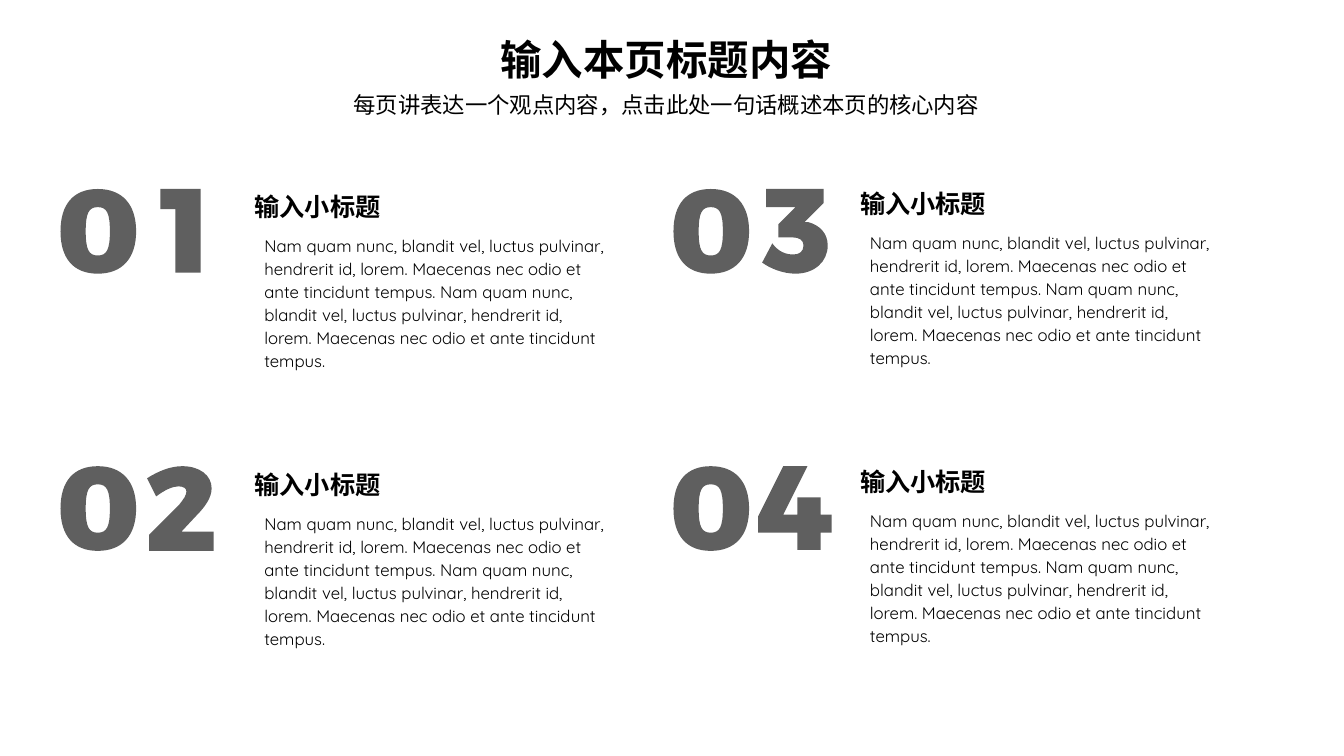
from dataclasses import dataclass
from typing import Optional, Union

import pptx
import pptx.dml.color
import pptx.enum.text
import pptx.oxml
import pptx.oxml.ns
import pptx.slide
import pptx.util

WIDTH = pptx.util.Inches(13.33)
HEIGHT = pptx.util.Inches(7.5)
BLACK = pptx.dml.color.RGBColor(0x00, 0x00, 0x00)
GREY = pptx.dml.color.RGBColor(0x5F, 0x5F, 0x5F)
FONT = "Quicksand"

HEADING = "输入小标题"
SENTENCES = (
    "Nam quam nunc, blandit vel, luctus pulvinar, hendrerit id, lorem. "
    "Maecenas nec odio et ante tincidunt tempus."
)
BODY = f"{SENTENCES} {SENTENCES}"

# Digit outlines in units of 1/750 of the slide height. A pair is the end of a
# line, six numbers are a cubic curve: two control points and the end.
DIGIT_UNIT = HEIGHT / 750
DIGITS = {
    "0": [
        [(25, 42), (25, 60, 28, 66, 37, 66), (46, 66, 49, 60, 49, 42),
         (49, 24, 46, 18, 37, 18), (28, 18, 25, 24, 25, 42)],
        [(75, 42), (75, 69, 61, 84, 37, 84), (13, 84, 0, 69, 0, 42),
         (0, 15, 13, 0, 37, 0), (61, 0, 75, 15, 75, 42)],
    ],
    "1": [[(15, 83), (15, 20), (0, 20), (0, 0), (40, 0), (40, 83)]],
    "2": [
        [(64, 22), (64, 31, 58, 40, 48, 50), (34, 65), (66, 65), (66, 84),
         (2, 84), (2, 68), (32, 38), (36, 33, 39, 29, 39, 25),
         (39, 22, 36, 20, 31, 20), (25, 20, 17, 24, 9, 30), (0, 12),
         (11, 5, 23, 0, 35, 0), (52, 0, 64, 9, 64, 22)],
    ],
    "3": [
        [(46, 33), (57, 36, 65, 44, 65, 56), (65, 72, 52, 84, 33, 84),
         (21, 84, 8, 79, 0, 73), (10, 54), (16, 62, 23, 65, 31, 65),
         (37, 65, 41, 62, 41, 56), (41, 51, 37, 48, 30, 48), (16, 48),
         (16, 35), (33, 18), (4, 18), (4, 0), (61, 0), (61, 14), (42, 33)],
    ],
    "4": [
        [(39, 48), (39, 31), (62, 31), (62, 48), (73, 48), (73, 66), (62, 66),
         (62, 83), (39, 83), (39, 66), (0, 66), (0, 50), (25, 0), (49, 0),
         (25, 48)],
    ],
}


@dataclass(frozen=True)
class Box:
    """A rectangle in percent of the slide's width and height."""
    left: float
    top: float
    width: float
    height: float


@dataclass(frozen=True)
class Column:
    """Left edges and heading top of one column of topics, in percent."""
    zero_left: float
    text_left: float
    heading_top: float


@dataclass(frozen=True)
class Topic:
    digit: str
    digit_left: float
    column: Column
    row: int


LEFT = Column(4.5, 18.93, 23.6)
RIGHT = Column(50.11, 63.99, 23.2)
TOPICS = (
    Topic("1", 11.93, LEFT, 0),
    Topic("2", 10.95, LEFT, 1),
    Topic("3", 56.71, RIGHT, 0),
    Topic("4", 56.41, RIGHT, 1),
)
DIGIT_TOP, DIGIT_PITCH = 25, 36.67
TEXT_PITCH = 36.8
BODY_DROP = 6.53


def across(percent: float) -> int:
    return round(WIDTH * percent / 100)


def down(percent: float) -> int:
    return round(HEIGHT * percent / 100)


def add_digit(slide: pptx.slide.Slide, digit: str, left: float, top: float) -> None:
    contours = DIGITS[digit]
    builder = slide.shapes.build_freeform(*contours[0][0], scale=DIGIT_UNIT)
    for index, (start, *segments) in enumerate(contours):
        if index:
            builder.move_to(*start)
        builder.add_line_segments([segment[-2:] for segment in segments], close=True)
    shape = builder.convert_to_shape(across(left), down(top))
    shape.shadow.inherit = False
    shape.fill.solid()
    shape.fill.fore_color.rgb = GREY
    shape.line.fill.background()

    lines = list(shape.element.iter(pptx.oxml.ns.qn("a:lnTo")))
    segments = [segment for contour in contours for segment in contour[1:]]
    for line, segment in zip(lines, segments):
        if len(segment) == 6:
            bend_line(line, segment)


def bend_line(line: pptx.oxml.xmlchemy.BaseOxmlElement, curve: tuple[int, ...]) -> None:
    """Replace a straight path segment by a cubic curve."""
    points = "".join(f'<a:pt x="{x}" y="{y}"/>' for x, y in zip(curve[::2], curve[1::2]))
    bend = pptx.oxml.parse_xml(
        f'<a:cubicBezTo {pptx.oxml.ns.nsdecls("a")}>{points}</a:cubicBezTo>')
    line.getparent().replace(line, bend)


def add_text(
    slide: pptx.slide.Slide,
    text: str,
    box: Box,
    *,
    size: float,
    line_spacing: Union[float, pptx.util.Pt],
    bold: bool = False,
    centred: bool = False,
    space_before: float = 0,
    grow: bool = False,
    wrap: bool = True,
    margin: Optional[int] = None,
    middle: bool = False,
) -> None:
    shape = slide.shapes.add_textbox(
        across(box.left), down(box.top), across(box.width), down(box.height))
    frame = shape.text_frame
    frame.word_wrap = wrap
    if grow:
        frame.auto_size = pptx.enum.text.MSO_AUTO_SIZE.SHAPE_TO_FIT_TEXT
    if middle:
        frame.vertical_anchor = pptx.enum.text.MSO_ANCHOR.MIDDLE
    if margin is not None:
        frame.margin_left = frame.margin_right = margin
        frame.margin_top = frame.margin_bottom = margin
    paragraph = frame.paragraphs[0]
    paragraph.line_spacing = line_spacing
    paragraph.space_before = pptx.util.Pt(space_before)
    if centred:
        paragraph.alignment = pptx.enum.text.PP_ALIGN.CENTER
    run = paragraph.add_run()
    run.text = text
    run.font.name = FONT
    run.font.size = pptx.util.Pt(size)
    run.font.bold = bold
    run.font.color.rgb = BLACK


def add_number(slide: pptx.slide.Slide, topic: Topic) -> None:
    top = DIGIT_TOP + topic.row * DIGIT_PITCH
    add_digit(slide, "0", topic.column.zero_left, top)
    add_digit(slide, topic.digit, topic.digit_left, top)


def add_topic_text(slide: pptx.slide.Slide, topic: Topic) -> None:
    left = topic.column.text_left
    top = topic.column.heading_top + topic.row * TEXT_PITCH
    add_text(slide, BODY, Box(left, top + BODY_DROP, 27.31, 16.4),
             size=12, line_spacing=1.14, grow=True)
    add_text(slide, HEADING, Box(left, top, 9.53, 5.47),
             size=18, line_spacing=1.5, bold=True, grow=True, wrap=False,
             margin=0, middle=True)


def main() -> None:
    presentation = pptx.Presentation()
    presentation.slide_width, presentation.slide_height = WIDTH, HEIGHT
    slide = presentation.slides.add_slide(presentation.slide_layouts[6])
    for topic in TOPICS:
        add_number(slide, topic)
        add_topic_text(slide, topic)
    add_text(slide, "输入本页标题内容", Box(6.27, 2.6, 86.65, 8.67),
             size=29.6, line_spacing=pptx.util.Pt(42), bold=True, centred=True)
    add_text(slide, "每页讲表达一个观点内容，点击此处一句话概述本页的核心内容",
             Box(6.27, 11.8, 86.65, 5.2),
             size=16, line_spacing=0.9, centred=True, space_before=10)
    presentation.save("out.pptx")


if __name__ == "__main__":
    main()
